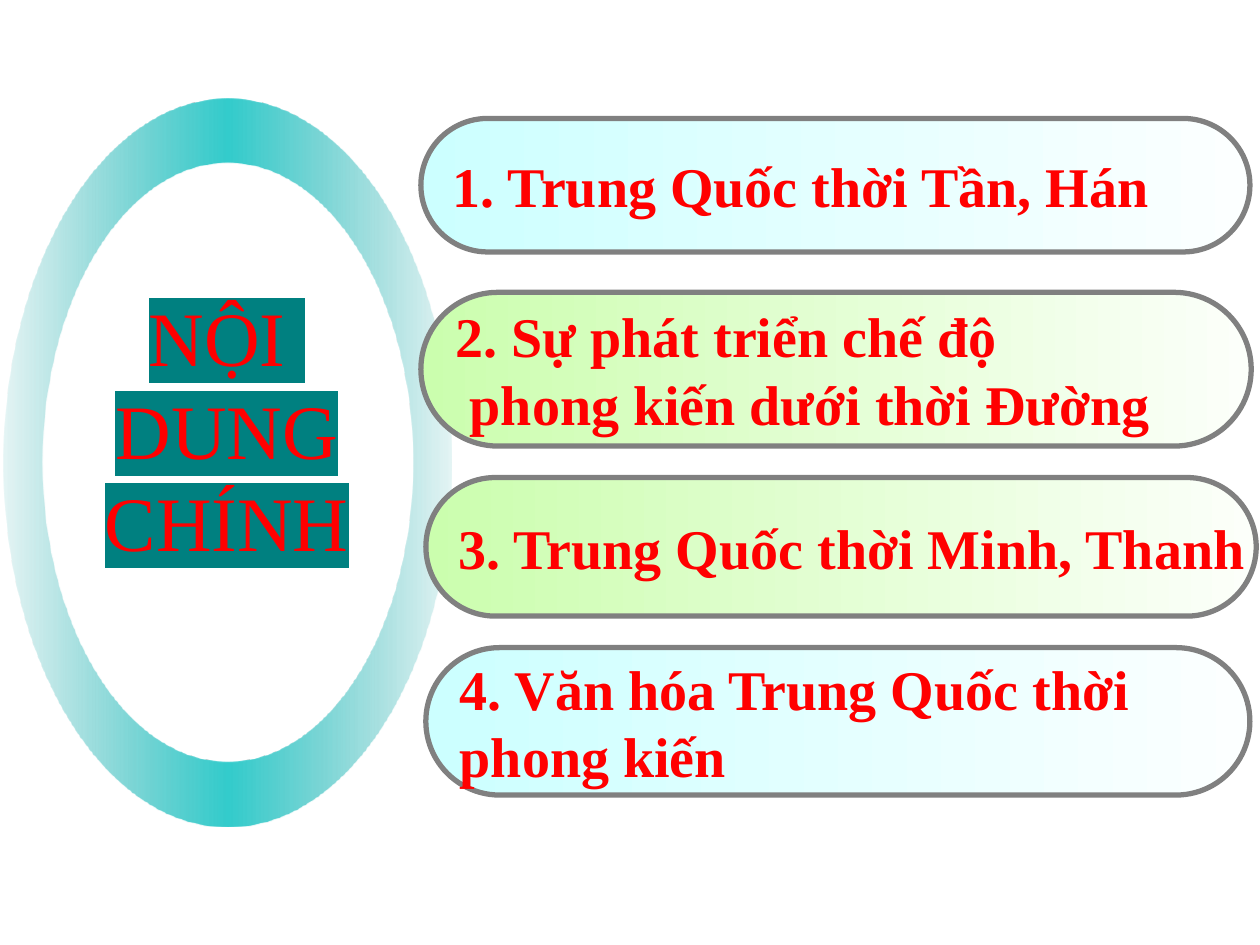
from lxml.etree import SubElement
from pptx import Presentation
from pptx.dml.color import RGBColor
from pptx.enum.shapes import MSO_SHAPE
from pptx.enum.text import MSO_ANCHOR, MSO_AUTO_SIZE, PP_ALIGN
from pptx.oxml.ns import qn
from pptx.oxml.xmlchemy import OxmlElement
from pptx.util import Inches, Pt

WIDE, HIGH = Inches(10), Inches(7.5)
FACE, RED, TEAL = "Times New Roman", "FF0000", "008080"
AQUA = [(0, "CCFFFF", 100), (100, "FCFFFF", 100)]
LIME = [(0, "CBFEAE", 100), (100, "FCFFFA", 100)]
RIM = [(0, "2BABAB", 12), (50, "33CCCC", 100), (100, "2BABAB", 12)]
BEND = 0.55  # handle length of a quarter arc, as a share of the radius

# left, top, width, height in inches; stops; lines
TOPICS = [
    (3.34, 0.94, 6.58, 1.06, AQUA, ["1. Trung Quốc thời Tần, Hán"]),
    (3.34, 2.32, 6.59, 1.22, LIME,
     ["2. Sự phát triển chế độ", " phong kiến dưới thời Đường"]),
    (3.38, 3.79, 6.59, 1.1, LIME, ["3. Trung Quốc thời Minh, Thanh"]),
    (3.38, 5.14, 6.54, 1.17, AQUA,
     ["4. Văn hóa Trung Quốc thời", "phong kiến"]),
]


def color(code):
    return RGBColor.from_string(code)


def apply(target, values):
    for name, value in values.items():
        setattr(target, name, value)


def shade(shape, stops):
    """Fill with a left-to-right gradient of (percent, colour, opacity)."""
    shape.shadow.inherit = False
    shape.fill.gradient()
    shape.fill.gradient_angle = 0
    ramp = shape._element.spPr.find(".//" + qn("a:gsLst"))
    ramp.clear()
    for spot, code, alpha in stops:
        stop = SubElement(ramp, qn("a:gs"), pos=str(spot * 1000))
        tint = SubElement(stop, qn("a:srgbClr"), val=code)
        if alpha < 100:
            SubElement(tint, qn("a:alpha"), val=str(alpha * 1000))


def write(frame, lines, align, size, bold):
    """Fill the frame, one paragraph a line, and return the runs."""
    runs = []
    for row, line in enumerate(lines):
        para = frame.add_paragraph() if row else frame.paragraphs[0]
        para.alignment = align
        run = para.add_run()
        run.text = line
        apply(run.font, {"size": Pt(size), "bold": bold})
        run.font.color.rgb = color(RED)
        runs.append(run)
    return runs


def mark(run):
    """Add a highlight behind the text."""
    props = run._r.get_or_add_rPr()
    SubElement(SubElement(props, qn("a:highlight")), qn("a:srgbClr"), val=TEAL)


def oval(left, top, width, height, turn):
    """Knots and handles of an ellipse from its left end; turn is 1 or -1."""
    unit = [(-1, 0), (-1, -BEND), (-BEND, -1), (0, -1), (BEND, -1),
            (1, -BEND), (1, 0), (1, BEND), (BEND, 1), (0, 1),
            (-BEND, 1), (-1, BEND), (-1, 0)]
    return [(Inches(left + width * (1 + x) / 2),
             Inches(top + height * (1 + y * turn) / 2)) for x, y in unit]


def curve(shape):
    """Turn every three line segments into one Bezier curve."""
    lines = list(shape._element.iter(qn("a:lnTo")))
    for first in range(0, len(lines), 3):
        arc = OxmlElement("a:cubicBezTo")
        lines[first].addprevious(arc)
        for line in lines[first:first + 3]:
            arc.append(line[0])
            line.getparent().remove(line)


def ring(slide, outer, inner):
    edge, hole = oval(*outer, 1), oval(*inner, -1)
    pen = slide.shapes.build_freeform(*edge[0])
    pen.add_line_segments(edge[1:], close=True)
    pen.move_to(*hole[0])
    pen.add_line_segments(hole[1:], close=True)
    shape = pen.convert_to_shape()
    curve(shape)
    shade(shape, RIM)
    shape.line.fill.background()


def pill(slide, left, top, width, height, stops, lines):
    box = map(Inches, (left, top, width, height))
    shape = slide.shapes.add_shape(MSO_SHAPE.ROUNDED_RECTANGLE, *box)
    shape.adjustments[0] = 0.5
    shade(shape, stops)
    shape.line.color.rgb = color("808080")
    shape.line.width = Pt(3)
    apply(shape.text_frame, {"word_wrap": False,
                             "vertical_anchor": MSO_ANCHOR.MIDDLE})
    for run in write(shape.text_frame, lines, PP_ALIGN.LEFT, 32, True):
        run.font.name = FACE


def head(slide, lines):
    title = slide.shapes.title
    apply(title, {"left": Inches(0.42), "top": Inches(2.25),
                  "width": Inches(2.76), "height": Inches(2.32)})
    apply(title.text_frame, {"word_wrap": True,
                             "auto_size": MSO_AUTO_SIZE.SHAPE_TO_FIT_TEXT,
                             "vertical_anchor": MSO_ANCHOR.TOP})
    for run in write(title.text_frame, lines, PP_ALIGN.CENTER, 44, False):
        mark(run)
        run.font.name = FACE


def main():
    deck = Presentation()
    apply(deck, {"slide_width": WIDE, "slide_height": HIGH})
    slide = deck.slides.add_slide(deck.slide_layouts[5])
    ring(slide, (0.03, 0.78, 3.55, 5.78), (0.34, 1.29, 2.93, 4.75))
    for topic in TOPICS:
        pill(slide, *topic)
    head(slide, ["NỘI ", "DUNG CHÍNH"])
    deck.save("out.pptx")


if __name__ == "__main__":
    main()
